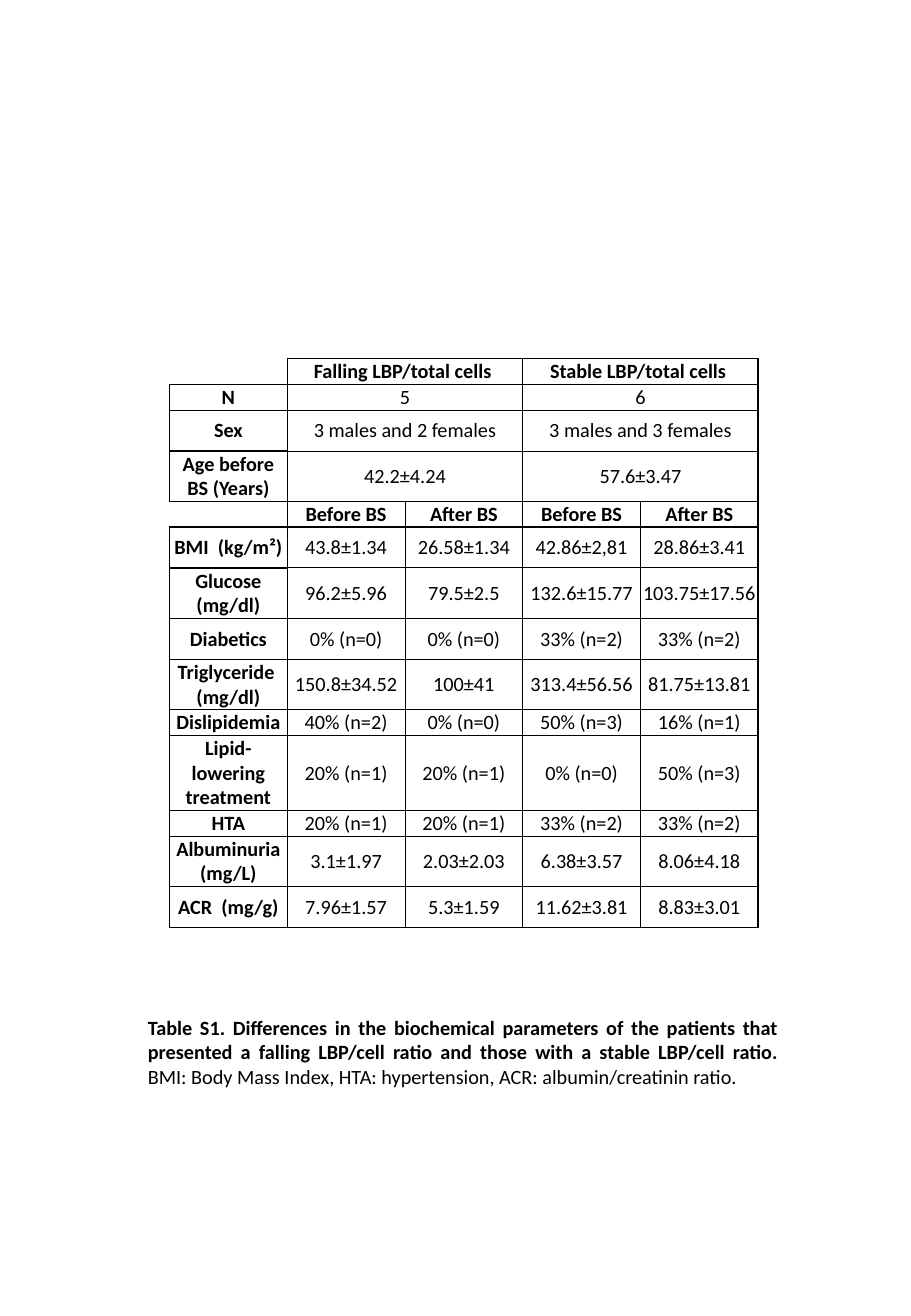
from dataclasses import dataclass

from lxml.etree import SubElement
from pptx import Presentation
from pptx.dml.color import RGBColor
from pptx.enum.text import MSO_ANCHOR, MSO_AUTO_SIZE, PP_ALIGN
from pptx.oxml.ns import qn
from pptx.util import Pt


@dataclass(frozen=True)
class Theme:
    font: str = "Calibri"
    size: float = 12
    ink: str = "000000"
    heavy: float = 1
    light: float = 0.5


THEME = Theme()

# Table content: rows with three entries have values spanning two columns
ROWS = [
    ("", "Falling LBP/total cells ", "Stable LBP/total cells "),
    ("N", "5", "6"),
    ("Sex", "3 males and 2 females", "3 males and 3 females"),
    ("Age before BS (Years)", "42.2±4.24", "57.6±3.47"),
    ("", "Before BS", "After BS", "Before BS", "After BS"),
    ("BMI  (kg/m²)", "43.8±1.34", "26.58±1.34", "42.86±2,81", "28.86±3.41"),
    ("Glucose (mg/dl)", "96.2±5.96", "79.5±2.5", "132.6±15.77", "103.75±17.56"),
    ("Diabetics", "0% (n=0)", "0% (n=0)", "33% (n=2)", "33% (n=2)"),
    ("Triglyceride  (mg/dl)", "150.8±34.52", "100±41", "313.4±56.56", "81.75±13.81"),
    ("Dislipidemia", "40% (n=2)", "0% (n=0)", "50% (n=3)", "16% (n=1)"),
    ("Lipid-lowering treatment", "20% (n=1)", "20% (n=1)", "0% (n=0)", "50% (n=3)"),
    ("HTA", "20% (n=1)", "20% (n=1)", "33% (n=2)", "33% (n=2)"),
    ("Albuminuria (mg/L)", "3.1±1.97", "2.03±2.03", "6.38±3.57", "8.06±4.18"),
    ("ACR  (mg/g)", "7.96±1.57", "5.3±1.59", "11.62±3.81", "8.83±3.01"),
]
HEADING_ROWS = {0, 4}
SHORT_ROWS = {0, 1, 4, 9, 11}
COLUMN_COUNT = 5
COLUMN_WIDTH, SHORT_HEIGHT, TALL_HEIGHT = 69.8, 14.8, 24.2

# Grid lines drawn heavy, counted from the top and from the left
HEAVY_ROW_LINES = {0, 1, 4, 5, len(ROWS)}
HEAVY_LABEL_LINES = HEAVY_ROW_LINES | {3, 6}
HEAVY_COLUMN_LINES = {0, 1, 3, 5}

CAPTION = [
    ("Table S1. Differences in the biochemical parameters of the patients that "
     "presented a falling LBP/cell ratio and those with a stable LBP/cell ratio. ", True),
    ("BMI: Body Mass Index, HTA: hypertension, ACR: albumin/creatinin ratio.", False),
]


def format_run(run, bold):
    run.font.name = THEME.font
    run.font.size = Pt(THEME.size)
    run.font.bold = bold
    run.font.color.rgb = RGBColor.from_string(THEME.ink)


def add_border(cell, side, width):
    """Draw one cell edge; a width of None leaves it open."""
    line = SubElement(cell._tc.get_or_add_tcPr(), qn(f"a:ln{side}"))
    if width is None:
        SubElement(line, qn("a:noFill"))
        return
    line.set("w", str(Pt(width)))
    fill = SubElement(line, qn("a:solidFill"))
    SubElement(fill, qn("a:srgbClr")).set("val", THEME.ink)


def border_widths(row, column, spanned):
    def weight(line, heavy_lines):
        return THEME.heavy if line in heavy_lines else THEME.light

    row_lines = HEAVY_LABEL_LINES if column == 0 else HEAVY_ROW_LINES
    widths = {
        "L": weight(column, HEAVY_COLUMN_LINES),
        "R": weight(column + 1, HEAVY_COLUMN_LINES),
        "T": weight(row, row_lines),
        "B": weight(row + 1, row_lines),
    }
    # The blank label cells are open at the left, and the first at the top too
    if column == 0 and row in HEADING_ROWS:
        widths["L"] = None
        if row == 0:
            widths["T"] = None
    # Spanned pairs have no line between their two columns
    if spanned and column:
        if column % 2:
            widths["R"] = THEME.heavy
        else:
            widths["L"] = None
    return widths


def format_cell(cell, text, bold, widths):
    cell.margin_left = cell.margin_top = cell.margin_right = Pt(0.6)
    cell.margin_bottom = Pt(0)
    cell.vertical_anchor = MSO_ANCHOR.MIDDLE
    for side, width in widths.items():
        add_border(cell, side, width)
    cell.fill.background()
    paragraph = cell.text_frame.paragraphs[0]
    paragraph.alignment = PP_ALIGN.CENTER
    if text:
        paragraph.text = text
        format_run(paragraph.runs[0], bold)
    else:
        # Keep the height of a blank cell at the table's text size
        end = SubElement(paragraph._p, qn("a:endParaRPr"))
        end.set("sz", str(int(THEME.size * 100)))


def add_results_table(slide, left, top):
    heights = [SHORT_HEIGHT if row in SHORT_ROWS else TALL_HEIGHT
               for row in range(len(ROWS))]
    table = slide.shapes.add_table(
        len(ROWS), COLUMN_COUNT, Pt(left), Pt(top),
        Pt(COLUMN_WIDTH * COLUMN_COUNT), Pt(sum(heights))).table
    table.first_row = table.horz_banding = False
    for column in table.columns:
        column.width = Pt(COLUMN_WIDTH)
    for row, entries in enumerate(ROWS):
        table.rows[row].height = Pt(heights[row])
        spanned = len(entries) < COLUMN_COUNT
        if spanned:
            label, falling, stable = entries
            entries = (label, falling, "", stable, "")
            for column in (1, 3):
                table.cell(row, column).merge(table.cell(row, column + 1))
        for column, text in enumerate(entries):
            bold = column == 0 or row in HEADING_ROWS
            format_cell(table.cell(row, column), text, bold,
                        border_widths(row, column, spanned))


def add_caption(slide, left, top, width, height):
    text_box = slide.shapes.add_textbox(Pt(left), Pt(top), Pt(width), Pt(height))
    text_frame = text_box.text_frame
    text_frame.word_wrap = True
    text_frame.auto_size = MSO_AUTO_SIZE.SHAPE_TO_FIT_TEXT
    paragraph = text_frame.paragraphs[0]
    paragraph.alignment = PP_ALIGN.JUSTIFY
    for text, bold in CAPTION:
        run = paragraph.add_run()
        run.text = text
        format_run(run, bold)


def main():
    presentation = Presentation()
    presentation.slide_width, presentation.slide_height = Pt(540), Pt(780)
    slide = presentation.slides.add_slide(presentation.slide_layouts[6])
    add_results_table(slide, 100.5, 212.6)
    add_caption(slide, 80.6, 598.3, 388, 51)
    presentation.save("out.pptx")


if __name__ == "__main__":
    main()
